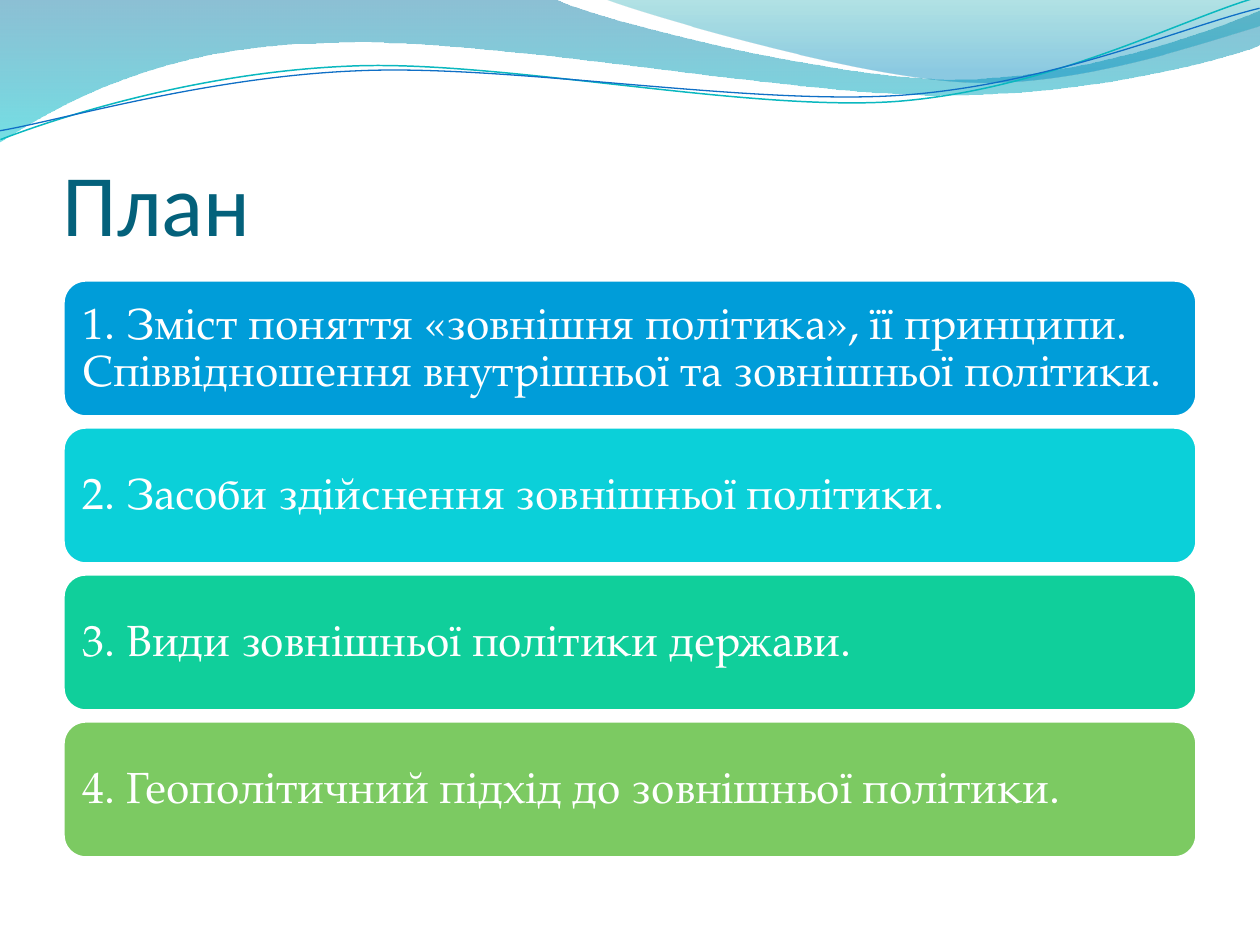
from lxml import etree
from pptx import Presentation
from pptx.dml.color import RGBColor
from pptx.enum.shapes import MSO_SHAPE
from pptx.enum.text import MSO_ANCHOR, PP_ALIGN
from pptx.oxml.ns import qn
from pptx.util import Pt

ROUNDED = MSO_SHAPE.ROUNDED_RECTANGLE
MIDDLE, BOTTOM = MSO_ANCHOR.MIDDLE, MSO_ANCHOR.BOTTOM
LEFT = PP_ALIGN.LEFT

TITLE = "План"
TOPICS = [
    ("1. Зміст поняття «зовнішня політика», її принципи. "
     "Співвідношення внутрішньої та зовнішньої політики.", "009DD9"),
    ("2. Засоби здійснення зовнішньої політики.", "0BD0D9"),
    ("3. Види зовнішньої політики держави.", "10CF9B"),
    ("4. Геополітичний підхід до зовнішньої політики.", "7CCA62"),
]
WAVES = [
    ([(0, 0), (554, -1), (600, 21, 837, 79, 955, 79), (1075, 79, 1207, 33, 1260, 11),
      (1261, 45), (1239, 55, 1096, 96, 940, 95), (784, 95, 481, 35, 324, 43),
      (163, 45, 58, 105, -1, 142)],
     [(0, "0074A1", 45), (100, "00C6CF", 55)]),
    ([(604, -1), (641, 14, 859, 78, 969, 82), (1079, 87, 1211, 40, 1260, 26), (1260, 0)],
     [(0, "00A1A9", 30), (80, "008BBF", 45)]),
]
STRANDS = [
    ([(-2, 110), (58, 90, 199, 52, 350, 53), (499, 53, 745, 118, 896, 114),
      (1049, 109, 1184, 45, 1260, 27)], "0AB8BF", 0.85),
    ([(-2, 101), (57, 94, 207, 57, 357, 58), (509, 58, 750, 112, 902, 108),
      (1052, 104, 1188, 52, 1262, 38)], "0F6FC6", 0.75),
]
STRAND_TILT = 357.3
SLIDE_W, SLIDE_H = 1260, 945
MARGIN, CONTENT_W = 63, 1134
TITLE_TOP, TITLE_H = 97, 157
CARD_TOP, CARD_H, CARD_PITCH = 280, 137, 147


def px(length):
    return round(length * 914400 / 126)


def color(code):
    return RGBColor.from_string(code)


def add_outline(slide, segments, close):
    points = [(px(x), px(y)) for segment in segments
              for x, y in zip(segment[::2], segment[1::2])]
    builder = slide.shapes.build_freeform(*points[0], scale=1.0)
    builder.add_line_segments(points[1:], close=close)
    outline = builder.convert_to_shape()
    outline.shadow.inherit = False
    steps = iter(list(outline._element.iter(qn("a:lnTo"))))
    for segment in segments[1:]:
        step = next(steps)
        if len(segment) == 6:
            step.tag = qn("a:cubicBezTo")
            curve = etree.Element(qn("a:cubicBezTo"))
            step.addprevious(curve)
            for corner in (step, next(steps), next(steps)):
                curve.append(corner[0])
                corner.getparent().remove(corner)
    return outline


def fill_gradient(shape, stops):
    shape.fill.gradient()
    gradient = shape._element.spPr.find(qn("a:gradFill"))
    for child in list(gradient):
        gradient.remove(child)
    stop_list = etree.SubElement(gradient, qn("a:gsLst"))
    for position, code, opacity in stops:
        stop = etree.SubElement(stop_list, qn("a:gs"), pos=str(position * 1000))
        tint = etree.SubElement(stop, qn("a:srgbClr"), val=code)
        etree.SubElement(tint, qn("a:alpha"), val=str(opacity * 1000))
    etree.SubElement(gradient, qn("a:lin"), ang="5400000", scaled="0")


def write(shape, text, *, font, size, ink, anchor, insets, spacing=1.0):
    frame = shape.text_frame
    frame.word_wrap = True
    frame.vertical_anchor = anchor
    frame.margin_left = frame.margin_right = px(insets[0])
    frame.margin_top, frame.margin_bottom = px(insets[1]), px(insets[2])
    paragraph = frame.paragraphs[0]
    paragraph.alignment = LEFT
    paragraph.line_spacing = spacing
    run = paragraph.add_run()
    run.text = text
    run.font.name = font
    run.font.size = Pt(size)
    run.font.color.rgb = color(ink)


def main():
    deck = Presentation()
    deck.slide_width, deck.slide_height = px(SLIDE_W), px(SLIDE_H)
    slide = deck.slides.add_slide(deck.slide_layouts[6])

    for segments, stops in WAVES:
        wave = add_outline(slide, segments, True)
        fill_gradient(wave, stops)
        wave.line.fill.background()

    for segments, ink, width in STRANDS:
        strand = add_outline(slide, segments, False)
        strand.rotation = STRAND_TILT
        strand.fill.background()
        strand.line.color.rgb = color(ink)
        strand.line.width = Pt(width)

    title = slide.shapes.add_textbox(px(MARGIN), px(TITLE_TOP), px(CONTENT_W), px(TITLE_H))
    write(title, TITLE, font="Calibri", size=50, ink="04617B",
          anchor=BOTTOM, insets=(0, 6, 0))

    for index, (topic, background) in enumerate(TOPICS):
        card = slide.shapes.add_shape(ROUNDED, px(MARGIN), px(CARD_TOP + index * CARD_PITCH),
                                      px(CONTENT_W), px(CARD_H))
        card.shadow.inherit = False
        card.fill.solid()
        card.fill.fore_color.rgb = color(background)
        card.line.color.rgb = color("FFFFFF")
        card.line.width = Pt(2)
        write(card, topic, font="TeX Gyre Pagella", size=25, ink="FFFFFF",
              anchor=MIDDLE, insets=(13, 13, 13), spacing=0.9)

    deck.save("out.pptx")


if __name__ == "__main__":
    main()
